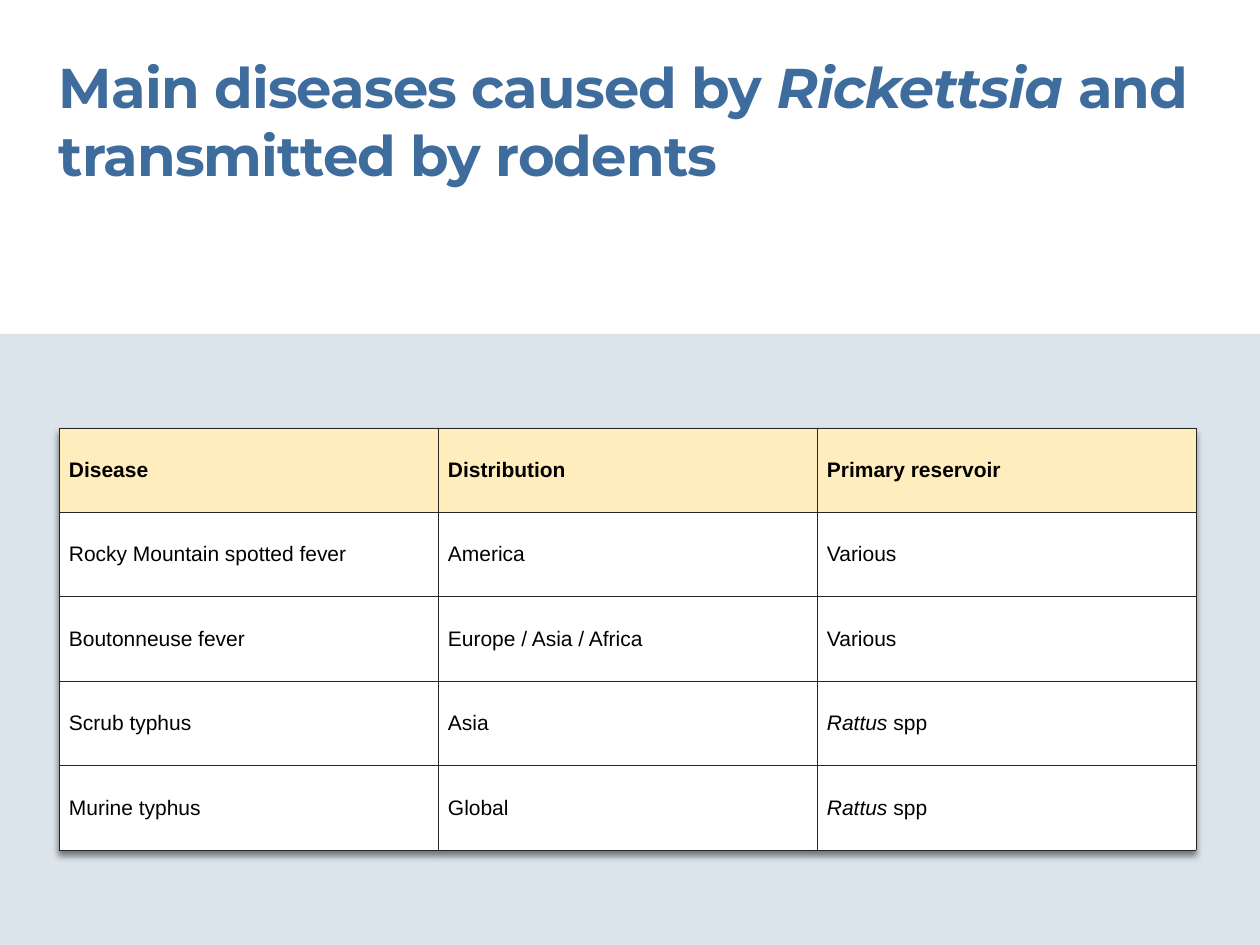
import pptx
import pptx.dml.color
import pptx.enum.shapes
import pptx.enum.text
import pptx.util
from lxml import etree
from pptx.oxml.ns import qn

RGBColor = pptx.dml.color.RGBColor
TITLE_BLUE = RGBColor(0x3D, 0x6C, 0x9D)
PANEL_BLUE = RGBColor(0xDB, 0xE4, 0xEA)
HEADER_CREAM = RGBColor(0xFF, 0xED, 0xBD)
WHITE = RGBColor(0xFF, 0xFF, 0xFF)
BLACK = RGBColor(0x00, 0x00, 0x00)
BORDER_GREY = RGBColor(0x26, 0x26, 0x26)

PX = 914400 // 126
WIDTH, HEIGHT = 1260, 945
MARGIN, CONTENT_WIDTH = 59, 1137

DISEASES = [
    ("Disease", "Distribution", "Primary reservoir"),
    ("Rocky Mountain spotted fever", "America", "Various"),
    ("Boutonneuse fever", "Europe / Asia / Africa", "Various"),
    ("Scrub typhus", "Asia", "*Rattus* spp"),
    ("Murine typhus", "Global", "*Rattus* spp"),
]


def add_color(parent, color):
    fill = etree.SubElement(parent, qn("a:solidFill"))
    etree.SubElement(fill, qn("a:srgbClr"), val=str(color))


class SlideBuilder:
    title_font = "Montserrat"
    table_font = "Arial"

    def __init__(self, slide):
        self.slide = slide

    def add_runs(self, text_frame, marked_text, font, size, color, bold, spacing=0):
        paragraph = text_frame.paragraphs[0]
        for index, piece in enumerate(marked_text.split("*")):
            run = paragraph.add_run()
            run.text = piece
            run.font.name = font
            run.font.size = pptx.util.Pt(size)
            run.font.color.rgb = color
            run.font.bold = bold
            run.font.italic = index % 2 == 1
            if spacing:
                run._r.get_or_add_rPr().set("spc", str(spacing))
            if not piece:
                paragraph._p.remove(run._r)

    def panel(self, left, top, width, height, color):
        panel = self.slide.shapes.add_shape(
            pptx.enum.shapes.MSO_SHAPE.RECTANGLE,
            left * PX, top * PX, width * PX, height * PX)
        panel.shadow.inherit = False
        panel.fill.solid()
        panel.fill.fore_color.rgb = color
        panel.line.fill.background()

    def title(self, left, top, width, height, marked_text):
        frame = self.slide.shapes.add_textbox(
            left * PX, top * PX, width * PX, height * PX).text_frame
        frame.word_wrap = True
        frame.auto_size = pptx.enum.text.MSO_AUTO_SIZE.SHAPE_TO_FIT_TEXT
        frame.margin_left = frame.margin_right = 0
        frame.margin_top = frame.margin_bottom = 0
        self.add_runs(frame, marked_text, self.title_font, 32, TITLE_BLUE, True, -50)

    def table(self, left, top, width, height, rows):
        table = self.slide.shapes.add_table(
            len(rows), len(rows[0]),
            left * PX, top * PX, width * PX, height * PX).table
        table.horz_banding = False
        self.table_shadow(table)
        for row_index, row in enumerate(rows):
            header = row_index == 0
            for column_index, marked_text in enumerate(row):
                cell = table.cell(row_index, column_index)
                cell.vertical_anchor = pptx.enum.text.MSO_ANCHOR.MIDDLE
                cell.margin_left = cell.margin_right = 10 * PX
                cell.margin_top = cell.margin_bottom = 6 * PX
                self.add_runs(cell.text_frame, marked_text, self.table_font, 12, BLACK, header)
                self.cell_borders(cell)
                cell.fill.solid()
                cell.fill.fore_color.rgb = HEADER_CREAM if header else WHITE

    def cell_borders(self, cell):
        properties = cell._tc.get_or_add_tcPr()
        for side in ("a:lnL", "a:lnR", "a:lnT", "a:lnB"):
            border = etree.SubElement(properties, qn(side), w=str(pptx.util.Pt(0.5)))
            add_color(border, BORDER_GREY)

    def table_shadow(self, table):
        effects = etree.Element(qn("a:effectLst"))
        shadow = etree.SubElement(
            effects, qn("a:outerShdw"), blurRad="50800", dist="38100",
            dir="5400000", algn="t", rotWithShape="0")
        color = etree.SubElement(shadow, qn("a:srgbClr"), val=str(BLACK))
        etree.SubElement(color, qn("a:alpha"), val="50000")
        table._tbl.tblPr.insert(0, effects)


def main():
    presentation = pptx.Presentation()
    presentation.slide_width = WIDTH * PX
    presentation.slide_height = HEIGHT * PX
    builder = SlideBuilder(presentation.slides.add_slide(presentation.slide_layouts[6]))
    builder.panel(0, 334, WIDTH, HEIGHT - 334, PANEL_BLUE)
    builder.title(MARGIN, 53, CONTENT_WIDTH, 136,
                  "Main diseases caused by *Rickettsia* and transmitted by rodents")
    builder.table(MARGIN, 428, CONTENT_WIDTH, 422, DISEASES)
    presentation.save("out.pptx")


if __name__ == "__main__":
    main()
